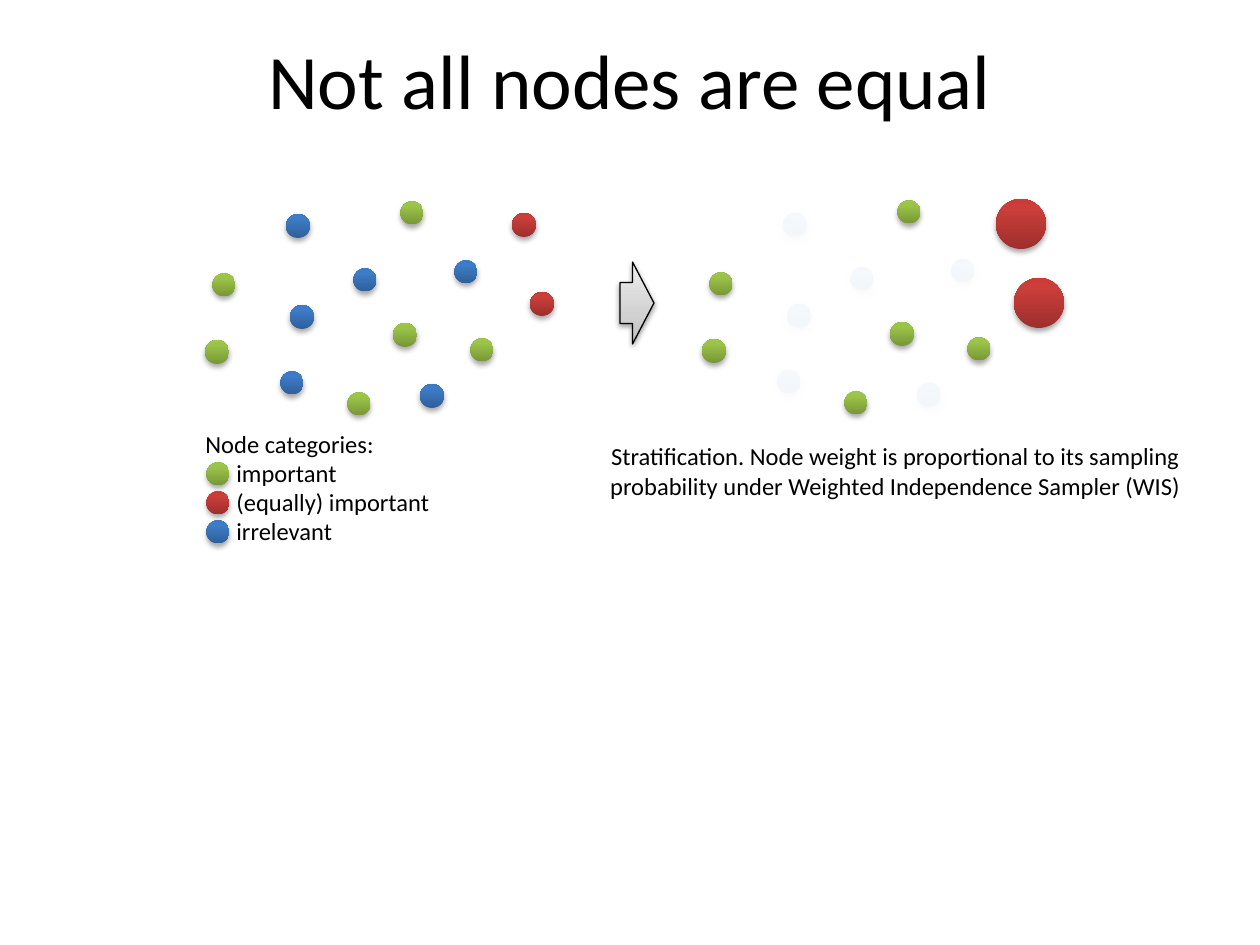
from lxml import etree
from pptx import Presentation
from pptx.dml.color import RGBColor
from pptx.enum.shapes import MSO_SHAPE
from pptx.enum.text import MSO_ANCHOR, PP_ALIGN
from pptx.oxml.ns import qn
from pptx.util import Emu, Pt

OVAL, RECT, ARROW = MSO_SHAPE.OVAL, MSO_SHAPE.RECTANGLE, MSO_SHAPE.RIGHT_ARROW
LEFT, CENTER = PP_ALIGN.LEFT, PP_ALIGN.CENTER
TOP, MIDDLE = MSO_ANCHOR.TOP, MSO_ANCHOR.MIDDLE
EMU_PER_PX = 914400 / 126
FONT = "Calibri"

COLORS = {"text": "000000", "line": "000000", "shadow": "000000", "veil": "FFFFFF"}
# Gradient stops from bottom to top: position in percent, colour
GRADIENTS = {
    "green": [(0, "779737"), (80, "9BC348"), (100, "9DC746")],
    "red": [(0, "9C2F2D"), (80, "CB3E3A"), (100, "CE3B37")],
    "blue": [(0, "2F5F99"), (80, "3D7CC7"), (100, "3A7CCB")],
    "grey": [(0, "BDBDBD"), (35, "D1D1D1"), (100, "EEEEEE")],
}

# Nodes: category, centre x, centre y, diameter, relative to the network box
NODES = [
    ("blue", 110, 187, 23), ("green", 42, 89, 23), ("blue", 120, 121, 24),
    ("red", 360, 108, 24), ("blue", 250, 200, 24), ("red", 342, 29, 24),
    ("green", 35, 156, 24), ("green", 230, 17, 23), ("blue", 116, 30, 24),
    ("blue", 284, 76, 23), ("green", 177, 208, 23), ("green", 300, 154, 23),
    ("green", 223, 139, 24), ("blue", 183, 84, 23),
]
HEAVY_DIAMETER = 50
LEGEND = [("green", "important", 178), ("red", "(equally) important", 247),
          ("blue", "irrelevant", 178)]


def px(value):
    return Emu(round(value * EMU_PER_PX))


def add_color(parent, color, alpha=None):
    node = etree.SubElement(parent, qn("a:srgbClr"), val=color)
    if alpha is not None:
        etree.SubElement(node, qn("a:alpha"), val=str(alpha * 1000))


def add_plain_shape(slide, kind, x, y, w, h):
    shape = slide.shapes.add_shape(kind, px(x), px(y), px(w), px(h))
    shape.shadow.inherit = False
    shape.line.fill.background()
    return shape


def add_glossy_shape(slide, kind, x, y, w, h, gradient, shadow_alpha=35, distance=1.8):
    """Shape with a vertical gradient and a soft shadow below it."""
    shape = add_plain_shape(slide, kind, x, y, w, h)
    shape.fill.gradient()
    shape.fill.gradient_angle = 90
    properties = shape.element.spPr
    stops = properties.find(".//" + qn("a:gsLst"))
    for stop in list(stops):
        stops.remove(stop)
    for position, color in GRADIENTS[gradient]:
        add_color(etree.SubElement(stops, qn("a:gs"), pos=str(position * 1000)), color)
    shadow = etree.SubElement(
        properties.find(qn("a:effectLst")), qn("a:outerShdw"), blurRad=str(Pt(3.1)),
        dist=str(Pt(distance)), dir="5400000", rotWithShape="0")
    add_color(shadow, COLORS["shadow"], shadow_alpha)
    return shape


def add_node(slide, category, x, y, diameter):
    add_glossy_shape(slide, OVAL, x - diameter / 2, y - diameter / 2,
                     diameter, diameter, category)


def add_text(slide, text, x, y, w, h, size=14, align=LEFT, anchor=TOP):
    frame = slide.shapes.add_textbox(px(x), px(y), px(w), px(h)).text_frame
    frame.word_wrap = True
    frame.vertical_anchor = anchor
    frame.text = text
    paragraph = frame.paragraphs[0]
    paragraph.alignment = align
    font = paragraph.runs[0].font
    font.name, font.size = FONT, Pt(size)
    font.color.rgb = RGBColor.from_string(COLORS["text"])


def add_network(slide, x, y):
    """All nodes at equal weight."""
    for category, cx, cy, diameter in NODES:
        add_node(slide, category, x + cx, y + cy, diameter)


def add_weighted_network(slide, x, y, w, h):
    """Irrelevant nodes faded by a veil, red nodes enlarged."""
    for category, cx, cy, diameter in NODES:
        if category == "blue":
            add_node(slide, category, x + cx, y + cy, diameter)
    veil = add_plain_shape(slide, RECT, x, y, w, h)
    veil.fill.solid()
    veil.fill.fore_color.rgb = RGBColor.from_string(COLORS["veil"])
    veil_color = veil.element.spPr.find(qn("a:solidFill")).find(qn("a:srgbClr"))
    etree.SubElement(veil_color, qn("a:alpha"), val="95000")
    for category, cx, cy, diameter in NODES:
        if category != "blue":
            size = HEAVY_DIAMETER if category == "red" else diameter
            add_node(slide, category, x + cx, y + cy, size)


def add_arrow(slide, x, y, w, h):
    arrow = add_glossy_shape(slide, ARROW, x, y, w, h, "grey", 38, 1.6)
    arrow.adjustments[0], arrow.adjustments[1] = 0.5, 0.63
    arrow.line.color.rgb = RGBColor.from_string(COLORS["line"])
    arrow.line.width = Pt(0.75)


def add_legend(slide, x, y):
    add_text(slide, "Node categories:", x, y, 231, 43)
    for row, (category, label, width) in enumerate(LEGEND):
        center = y + 51 + row * 29
        add_node(slide, category, x + 25, center, 23)
        add_text(slide, label, x + 31, center - 22, width, 43)


def main():
    prs = Presentation()
    prs.slide_width, prs.slide_height = px(1260), px(945)
    slide = prs.slides.add_slide(prs.slide_layouts[6])
    # Title
    add_text(slide, "Not all nodes are equal", 63, 0, 1134, 158, 44, CENTER, MIDDLE)
    # Networks before and after weighting
    add_network(slide, 182, 196)
    add_weighted_network(slide, 679, 195, 377, 231)
    add_arrow(slide, 620, 262, 34, 82)
    # Legend and caption
    add_legend(slide, 193, 423)
    add_text(slide, "Stratification. Node weight is proportional to its sampling "
             "probability under Weighted Independence Sampler (WIS)",
             593, 435, 605, 72, align=CENTER)
    prs.save("out.pptx")


if __name__ == "__main__":
    main()
